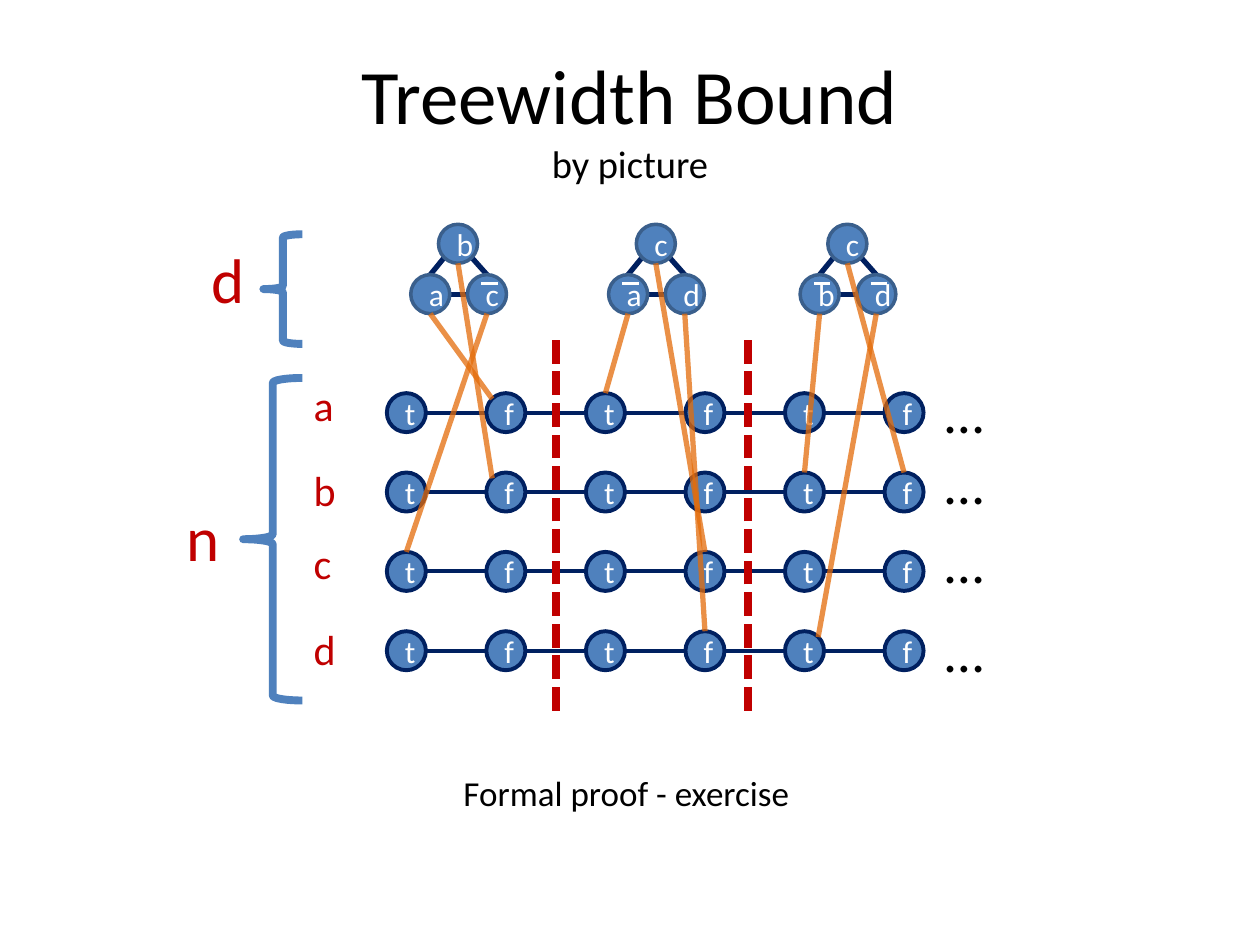
from lxml import etree
from pptx import Presentation
from pptx.dml.color import RGBColor
from pptx.enum.dml import MSO_LINE
from pptx.enum.shapes import MSO_CONNECTOR, MSO_SHAPE
from pptx.enum.text import MSO_ANCHOR, MSO_AUTO_SIZE, PP_ALIGN
from pptx.oxml.ns import qn
from pptx.util import Inches, Pt

STRAIGHT = MSO_CONNECTOR.STRAIGHT
OVAL = MSO_SHAPE.OVAL
LEFT_BRACE = MSO_SHAPE.LEFT_BRACE
MIDDLE = MSO_ANCHOR.MIDDLE
CENTER = PP_ALIGN.CENTER
FIT_SHAPE = MSO_AUTO_SIZE.SHAPE_TO_FIT_TEXT
SYS_DASH = MSO_LINE.SQUARE_DOT

BLACK = RGBColor(0x00, 0x00, 0x00)
WHITE = RGBColor(0xFF, 0xFF, 0xFF)
BLUE = RGBColor(0x4F, 0x81, 0xBD)
STEEL = RGBColor(0x3A, 0x5F, 0x8C)
NAVY = RGBColor(0x00, 0x20, 0x60)
RED = RGBColor(0xC0, 0x00, 0x00)
ORANGE = RGBColor(0xE4, 0x6C, 0x0A)

FONT = "Calibri"
NODE = 0.31
GRID_LEFT, GRID_TOP = 3.07, 3.12
COLUMN_STEP, ROW_STEP = 0.79, 0.63
VALUES = "tftftf"

SIDES = {
    "top": (0.5, 0), "left": (0, 0.5), "bottom": (0.5, 1), "right": (1, 0.5),
    "top left": (0.15, 0.15), "top right": (0.85, 0.15),
    "bottom left": (0.15, 0.85), "bottom right": (0.85, 0.85),
}

CLAUSE_LEFTS = (3.26, 4.83, 6.35)
LITERAL_OFFSETS = ((0, 2.18), (0.45, 2.18), (0.22, 1.78))
CLAUSES = ("acb", "adc", "bdc")
NEGATED = ((1,), (0,), (0, 1))
TRIANGLE = ((0, "right", 1, "left"), (1, "top", 2, "bottom right"),
            (0, "top", 2, "bottom left"))

LINKS = (
    (0, 0, 0, 1, "top left"), (0, 2, 1, 1, "top left"), (0, 1, 2, 0, "top"),
    (1, 0, 0, 2, "top"), (1, 2, 2, 3, "top"), (1, 1, 3, 3, "top"),
    (2, 0, 1, 4, "top"), (2, 1, 3, 4, "top right"), (2, 2, 1, 5, "top"),
)

ROW_LABELS = (("a", 2.96), ("b", 3.64), ("c", 4.22), ("d", 4.9))
ELLIPSIS_TOPS = (2.95, 3.51, 4.14, 4.84)


def grid_spot(row, column):
    return GRID_LEFT + column * COLUMN_STEP, GRID_TOP + row * ROW_STEP


def literal_spot(clause, literal):
    offset, top = LITERAL_OFFSETS[literal]
    return CLAUSE_LEFTS[clause] + offset, top


def rim(spot, side):
    across, down = SIDES[side]
    return spot[0] + across * NODE, spot[1] + down * NODE


def style_span(span, size, color):
    span.font.name = FONT
    span.font.size = Pt(size)
    span.font.color.rgb = color


def add_line(page, start, end, color, width):
    points = [Inches(value) for value in (*start, *end)]
    line = page.shapes.add_connector(STRAIGHT, *points)
    line.line.color.rgb = color
    line.line.width = Pt(width)
    etree.SubElement(line._element.spPr, qn("a:effectLst"))
    return line


def add_link(page, start, end):
    link = add_line(page, start, end, ORANGE, 3)
    color = next(link._element.spPr.iter(qn("a:srgbClr")))
    etree.SubElement(color, qn("a:alpha"), val="75000")


def add_node(page, spot, letter, outline, width):
    node = page.shapes.add_shape(OVAL, Inches(spot[0]), Inches(spot[1]),
                                 Inches(NODE), Inches(NODE))
    node.shadow.inherit = False
    node.fill.solid()
    node.fill.fore_color.rgb = BLUE
    node.line.color.rgb = outline
    node.line.width = Pt(width)
    frame = node.text_frame
    frame.text = letter
    frame.vertical_anchor = MIDDLE
    para = frame.paragraphs[0]
    para.alignment = CENTER
    style_span(para.runs[0], 18, WHITE)


def add_label(page, text, left, top, width, height, size, color):
    box = page.shapes.add_textbox(Inches(left), Inches(top),
                                  Inches(width), Inches(height))
    frame = box.text_frame
    frame.text = text
    frame.word_wrap = False
    frame.auto_size = FIT_SHAPE
    style_span(frame.paragraphs[0].runs[0], size, color)


def add_title(page):
    box = page.shapes.add_textbox(Inches(0.5), Inches(0.3), Inches(9), Inches(1.25))
    frame = box.text_frame
    frame.word_wrap = True
    frame.vertical_anchor = MIDDLE
    para = frame.paragraphs[0]
    para.text = "Treewidth Bound\vby picture"
    para.alignment = CENTER
    for span, size in zip(para.runs, (44, 22)):
        style_span(span, size, BLACK)


def add_brace(page, left, top, width, height):
    brace = page.shapes.add_shape(LEFT_BRACE, Inches(left), Inches(top),
                                  Inches(width), Inches(height))
    brace.shadow.inherit = False
    brace.fill.background()
    brace.line.color.rgb = BLUE
    brace.line.width = Pt(4.5)


def add_triangle(page, clause):
    for first, first_side, second, second_side in TRIANGLE:
        add_line(page, rim(literal_spot(clause, first), first_side),
                 rim(literal_spot(clause, second), second_side), NAVY, 3)


def add_variable_row(page, row):
    for column, value in enumerate(VALUES):
        add_node(page, grid_spot(row, column), value, NAVY, 2.25)
    for column in range(len(VALUES) - 1):
        add_line(page, rim(grid_spot(row, column), "right"),
                 rim(grid_spot(row, column + 1), "left"), NAVY, 2.25)


def add_clause(page, clause):
    for literal, letter in enumerate(CLAUSES[clause]):
        add_node(page, literal_spot(clause, literal), letter, STEEL, 2)
    for literal in NEGATED[clause]:
        left, top = literal_spot(clause, literal)
        add_line(page, (left + 0.11, top + 0.07), (left + 0.24, top + 0.07), WHITE, 2.25)


def main():
    deck = Presentation()
    deck.slide_width, deck.slide_height = Inches(10), Inches(7.5)
    page = deck.slides.add_slide(deck.slide_layouts[6])

    add_title(page)
    for clause in reversed(range(len(CLAUSES))):
        add_triangle(page, clause)
    for row in range(len(ROW_LABELS)):
        add_variable_row(page, row)
    for letter, top in ROW_LABELS:
        add_label(page, letter, 2.39, top, 0.37, 0.5, 24, RED)
    for x in (4.41, 5.94):
        divider = add_line(page, (x, 5.64), (x, 2.65), RED, 4.5)
        divider.line.dash_style = SYS_DASH
    for clause in range(len(CLAUSES)):
        add_clause(page, clause)
    for clause, literal, row, column, side in LINKS:
        add_link(page, rim(literal_spot(clause, literal), "bottom"),
                 rim(grid_spot(row, column), side))
    for top in ELLIPSIS_TOPS:
        add_label(page, "…", 7.4, top, 0.51, 0.64, 32, BLACK)
    add_brace(page, 1.93, 3, 0.47, 2.56)
    add_label(page, "n", 1.38, 3.91, 0.47, 0.71, 36, RED)
    add_brace(page, 2.09, 1.86, 0.31, 0.87)
    add_label(page, "d", 1.58, 1.86, 0.47, 0.71, 36, RED)
    add_label(page, "Formal proof - exercise", 3.58, 6.07, 2.81, 0.44, 20, BLACK)

    deck.save("out.pptx")


if __name__ == "__main__":
    main()
